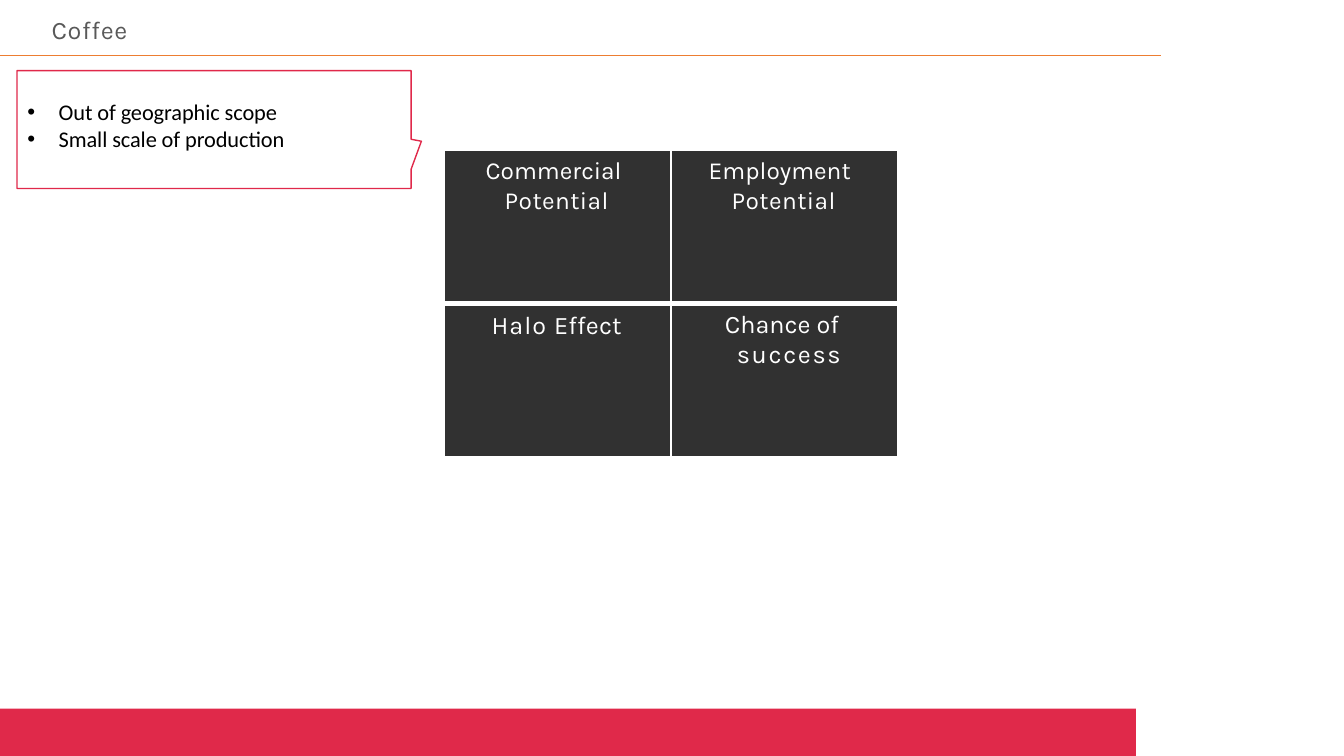
from lxml import etree
from pptx import Presentation
from pptx import util as u
from pptx.dml.color import RGBColor
from pptx.enum import shapes, text
from pptx.oxml import ns

# Each word: (text, letter spacing in points); words are joined by "\v" or " ".
TITLE = ("Coffee", 0.5)
REASONS = ["Out of geographic scope", "Small scale of production"]
CRITERIA = [
    [
        dict(words=[("Commercial\v", 0), ("Potential", 0.3)], size=17.5,
             left=1.52, first=-0.48, top=0.15, leading=1.04),
        dict(words=[("Employment\v", 0), ("Potential", 0.3)], size=17.5,
             left=1.52, first=-0.58, top=0.15, leading=1.04),
    ],
    [
        dict(words=[("Halo ", 0.7), ("Effect", 0.1)], size=18,
             left=1.19, first=0, top=0.19, leading=1.0),
        dict(words=[("Chance of\v", 0), ("success", 1.2)], size=18,
             left=1.65, first=-0.3, top=0.16, leading=1.01),
    ],
]
CALLOUT = [(0.43, 1.78), (10.36, 1.78), (10.36, 3.51), (10.62, 3.56),
           (10.36, 4.27), (10.36, 4.75), (0.43, 4.75)]
TABLE = dict(left=11.2, top=3.78, column=5.72, row=3.87)


class Theme:
    red, orange, grey = "E0294A", "ED7D31", "595959"
    dark, white, black = "313131", "FFFFFF", "000000"
    heading, body = "Karla", "Calibri"
    title_size, body_size = 18, 16
    thin_border, thick_border = 1.5, 4.25


def apply(target, **values):
    for name, value in values.items():
        setattr(target, name, value)


def add_run(paragraph, words, spacing, font, size, color):
    """Add a run; a vertical tab at its end becomes a line break."""
    run = paragraph.add_run()
    run.text = words.rstrip("\v")
    apply(run.font, name=font, size=u.Pt(size), bold=False)
    run.font.color.rgb = RGBColor.from_string(color)
    run._r.get_or_add_rPr().set("spc", str(round(spacing * 100)))
    if words.endswith("\v"):
        paragraph.add_line_break()


def set_indent(paragraph, left, first):
    properties = paragraph._p.get_or_add_pPr()
    properties.set("marL", str(u.Cm(left)))
    properties.set("indent", str(u.Cm(first)))
    return properties


def set_frame(frame, top=0):
    apply(frame, margin_left=0, margin_right=0, margin_top=u.Cm(top),
          margin_bottom=0, word_wrap=True, auto_size=text.MSO_AUTO_SIZE.NONE,
          vertical_anchor=text.MSO_ANCHOR.TOP)


def set_borders(cell, **widths):
    properties = cell._tc.get_or_add_tcPr()
    for index, (side, width) in enumerate(widths.items()):
        line = etree.Element(ns.qn("a:ln" + side), w=str(u.Pt(width)))
        fill = etree.SubElement(line, ns.qn("a:solidFill"))
        etree.SubElement(fill, ns.qn("a:srgbClr"), val=Theme.white)
        properties.insert(index, line)


def add_title(slide):
    title = slide.shapes.title
    apply(title, left=u.Cm(1.3), top=u.Cm(0.3), width=u.Cm(6), height=u.Cm(0.9))
    set_frame(title.text_frame, top=0.06)
    paragraph = title.text_frame.paragraphs[0]
    apply(paragraph, alignment=text.PP_ALIGN.LEFT, line_spacing=1.0,
          space_before=u.Pt(0))
    add_run(paragraph, *TITLE, Theme.heading, Theme.title_size, Theme.grey)


def add_bands(slide):
    bar = slide.shapes.add_shape(shapes.MSO_SHAPE.RECTANGLE, 0, u.Cm(17.86),
                                 u.Cm(28.63), u.Cm(1.19))
    bar.shadow.inherit = False
    bar.fill.solid()
    bar.fill.fore_color.rgb = RGBColor.from_string(Theme.red)
    bar.line.fill.background()

    rule = slide.shapes.add_connector(shapes.MSO_CONNECTOR.STRAIGHT,
                                      0, u.Cm(1.4), u.Cm(29.26), u.Cm(1.4))
    rule.line.width = u.Pt(0.5)
    rule.line.color.rgb = RGBColor.from_string(Theme.orange)
    etree.SubElement(rule._element.spPr, ns.qn("a:effectLst"))


def add_reasons(slide):
    points = [(u.Cm(x), u.Cm(y)) for x, y in CALLOUT]
    builder = slide.shapes.build_freeform(*points[0])
    builder.add_line_segments(points[1:], close=True)
    callout = builder.convert_to_shape()
    callout.shadow.inherit = False
    callout.fill.background()
    callout.line.width = u.Pt(1)
    callout.line.color.rgb = RGBColor.from_string(Theme.red)

    box = slide.shapes.add_textbox(u.Cm(0.64), u.Cm(2.48), u.Cm(7.5), u.Cm(1.4))
    frame = box.text_frame
    set_frame(frame)
    for index, reason in enumerate(REASONS):
        paragraph = frame.add_paragraph() if index else frame.paragraphs[0]
        properties = set_indent(paragraph, 0.84, -0.79)
        etree.SubElement(properties, ns.qn("a:buFont"), typeface="Arial")
        etree.SubElement(properties, ns.qn("a:buChar"), char="•")
        add_run(paragraph, reason, -0.05, Theme.body, Theme.body_size, Theme.black)


def add_criteria(slide):
    rows, columns = len(CRITERIA), len(CRITERIA[0])
    table = slide.shapes.add_table(
        rows, columns, u.Cm(TABLE["left"]), u.Cm(TABLE["top"]),
        u.Cm(TABLE["column"] * columns), u.Cm(TABLE["row"] * rows)).table
    apply(table, first_row=False, horz_banding=False)
    thin, thick = Theme.thin_border, Theme.thick_border
    for r, criteria in enumerate(CRITERIA):
        for c, item in enumerate(criteria):
            cell = table.cell(r, c)
            apply(cell, margin_left=0, margin_right=0, margin_bottom=0,
                  margin_top=u.Cm(item["top"]))
            cell.fill.solid()
            cell.fill.fore_color.rgb = RGBColor.from_string(Theme.dark)
            set_borders(cell, L=thin, R=thin, T=thick if r else thin,
                        B=thin if r == rows - 1 else thick)
            paragraph = cell.text_frame.paragraphs[0]
            set_indent(paragraph, item["left"], item["first"])
            paragraph.line_spacing = item["leading"]
            for words, spacing in item["words"]:
                add_run(paragraph, words, spacing, Theme.heading, item["size"],
                        Theme.white)


def main():
    presentation = Presentation()
    apply(presentation, slide_width=u.Cm(33.87), slide_height=u.Cm(19.05))
    slide = presentation.slides.add_slide(presentation.slide_layouts[5])
    add_bands(slide)
    add_title(slide)
    add_criteria(slide)
    add_reasons(slide)
    presentation.save("out.pptx")


if __name__ == "__main__":
    main()
